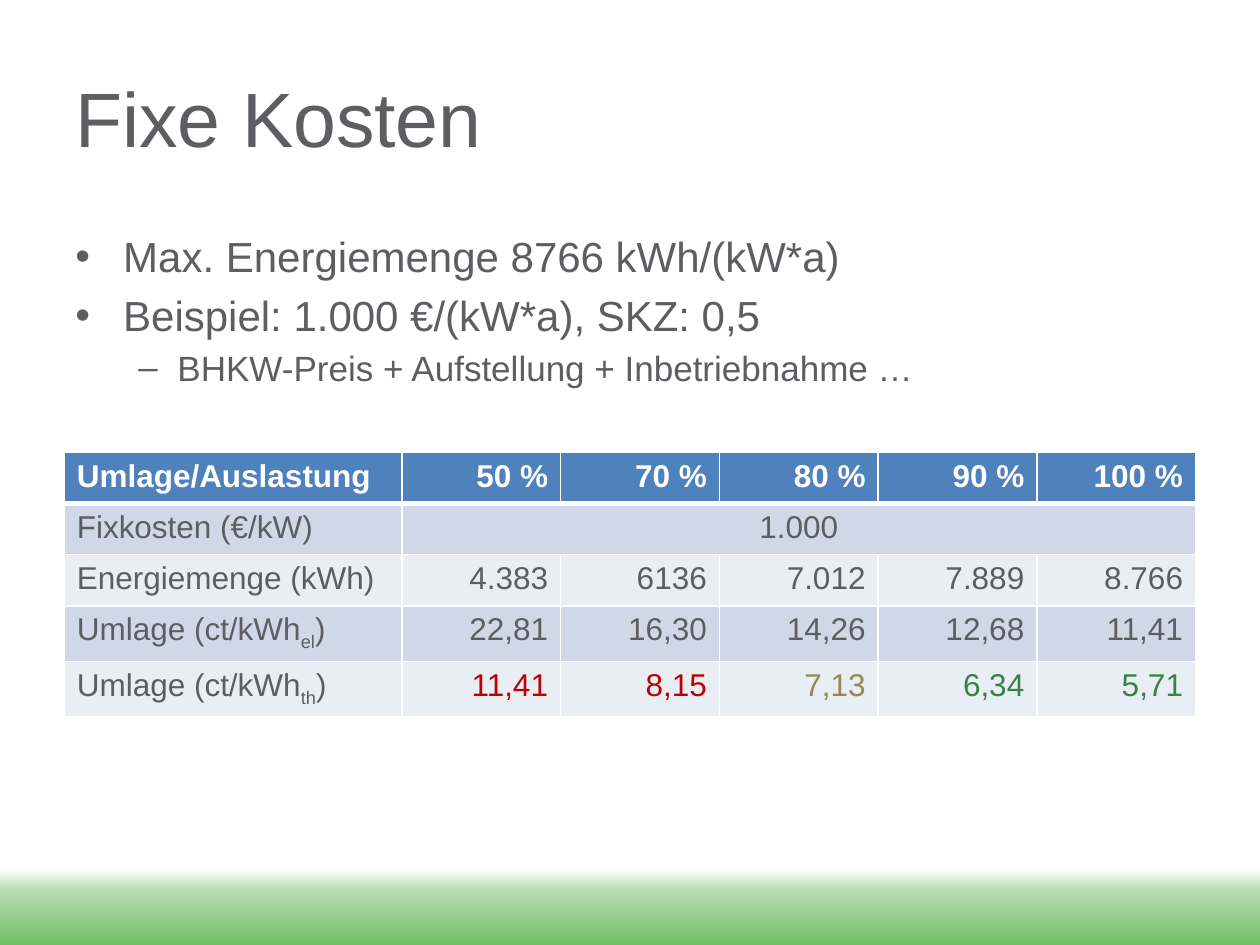
"""Build the slide on fixed costs and their allocation by utilisation."""
from lxml import etree
from pptx import Presentation
from pptx.dml.color import RGBColor
from pptx.enum.shapes import MSO_SHAPE
from pptx.enum.text import MSO_ANCHOR, PP_ALIGN
from pptx.oxml import parse_xml
from pptx.util import Inches, Pt

RECTANGLE = MSO_SHAPE.RECTANGLE
MIDDLE = MSO_ANCHOR.MIDDLE
LEFT, CENTER, RIGHT = PP_ALIGN.LEFT, PP_ALIGN.CENTER, PP_ALIGN.RIGHT
NS = "http://schemas.openxmlformats.org/drawingml/2006/main"
GRAY, WHITE = "5D5E61", "FFFFFF"
RED, OLIVE, GREEN = "C00000", "948A54", "378246"


def color(hex_value):
    return RGBColor.from_string(hex_value)


def add_run(paragraph, text, size, hex_value=GRAY, bold=False):
    run = paragraph.add_run()
    run.text = text
    run.font.name = "Arial"
    run.font.size = Pt(size)
    run.font.bold = bold
    run.font.color.rgb = color(hex_value)
    return run


prs = Presentation()
prs.slide_width, prs.slide_height = Inches(10), Inches(7.5)
slide = prs.slides.add_slide(prs.slide_layouts[6])

footer = slide.shapes.add_shape(RECTANGLE, Inches(0), Inches(6.9), Inches(10), Inches(0.6))
footer.shadow.inherit = False
footer.line.fill.background()
footer.fill.gradient()
footer.fill.gradient_angle = 270
stops = footer.fill._fill._gradFill.find(f"{{{NS}}}gsLst")
for stop in list(stops):
    stops.remove(stop)
for position, hex_value in ((0, WHITE), (26, "BADEB2"), (100, "74BD65")):
    stop = etree.SubElement(stops, f"{{{NS}}}gs", pos=str(position * 1000))
    etree.SubElement(stop, f"{{{NS}}}srgbClr", val=hex_value)

title = slide.shapes.add_textbox(Inches(0.5), Inches(0.3), Inches(7.02), Inches(1.25)).text_frame
title.word_wrap = True
title.vertical_anchor = MIDDLE
heading = add_run(title.paragraphs[0], "Fixe Kosten", 44)
heading.font.fill._xPr.find(f"{{{NS}}}solidFill").addnext(parse_xml(
    f'<a:effectLst xmlns:a="{NS}"><a:outerShdw blurRad="38100" dist="38100" dir="2700000">'
    '<a:srgbClr val="000000"><a:alpha val="43000"/></a:srgbClr></a:outerShdw></a:effectLst>'))

body = slide.shapes.add_textbox(Inches(0.5), Inches(1.75), Inches(9), Inches(4.95)).text_frame
body.word_wrap = True
body.margin_top = Inches(0.08)
points = (
    ("Max. Energiemenge 8766 kWh/(kW*a)", 0, 24, "•", 0.38, 0.38),
    ("Beispiel: 1.000 €/(kW*a), SKZ: 0,5", 0, 24, "•", 0.38, 0.38),
    ("BHKW-Preis + Aufstellung + Inbetriebnahme …", 1, 20, "–", 0.81, 0.31),
)
for index, (text, level, size, bullet, margin, hanging) in enumerate(points):
    paragraph = body.add_paragraph() if index else body.paragraphs[0]
    paragraph.level = level
    properties = paragraph._p.get_or_add_pPr()
    properties.set("marL", str(Inches(margin)))
    properties.set("indent", str(-Inches(hanging)))
    if index:
        spacing = etree.SubElement(properties, f"{{{NS}}}spcBef")
        etree.SubElement(spacing, f"{{{NS}}}spcPct", val="20000")
    etree.SubElement(properties, f"{{{NS}}}buFont", typeface="Arial")
    etree.SubElement(properties, f"{{{NS}}}buChar", char=bullet)
    add_run(paragraph, text, size)

rows = (
    (("Umlage/Auslastung",), "50 %", "70 %", "80 %", "90 %", "100 %"),
    (("Fixkosten (€/kW)",), "1.000"),
    (("Energiemenge (kWh)",), "4.383", "6136", "7.012", "7.889", "8.766"),
    (("Umlage (ct/kWh", "el", ")"), "22,81", "16,30", "14,26", "12,68", "11,41"),
    (("Umlage (ct/kWh", "th", ")"), "11,41", "8,15", "7,13", "6,34", "5,71"),
)
row_fills = ("4F81BD", "D0D8E8", "E9EDF4", "D0D8E8", "E9EDF4")
rating_colors = (GRAY, RED, RED, OLIVE, GREEN, GREEN)
costs = slide.shapes.add_table(
    5, 6, Inches(0.51), Inches(3.59), Inches(8.98), Inches(2.03)).table
for index, column in enumerate(costs.columns):
    column.width = Inches(1.26 if index else 2.68)
costs.cell(1, 1).merge(costs.cell(1, 5))

for r, values in enumerate(rows):
    for c in range(6):
        cell = costs.cell(r, c)
        for side in ("lnL", "lnR", "lnT", "lnB"):
            thick = (r, side) in ((0, "lnB"), (1, "lnT"))
            border = etree.SubElement(
                cell._tc.get_or_add_tcPr(), f"{{{NS}}}{side}", w=str(Pt(3 if thick else 1)))
            line_fill = etree.SubElement(border, f"{{{NS}}}solidFill")
            etree.SubElement(line_fill, f"{{{NS}}}srgbClr", val=WHITE)
        cell.fill.solid()
        cell.fill.fore_color.rgb = color(row_fills[r])
        if c >= len(values):
            continue
        paragraph = cell.text_frame.paragraphs[0]
        paragraph.alignment = LEFT if c == 0 else CENTER if r == 1 else RIGHT
        text_color = WHITE if r == 0 else rating_colors[c] if r == 4 else GRAY
        parts = values[c] if c == 0 else (values[c],)
        for index, part in enumerate(parts):
            run = add_run(paragraph, part, 18, text_color, bold=r == 0)
            if index == 1:
                run.font._element.set("baseline", "-25000")

prs.save("out.pptx")
